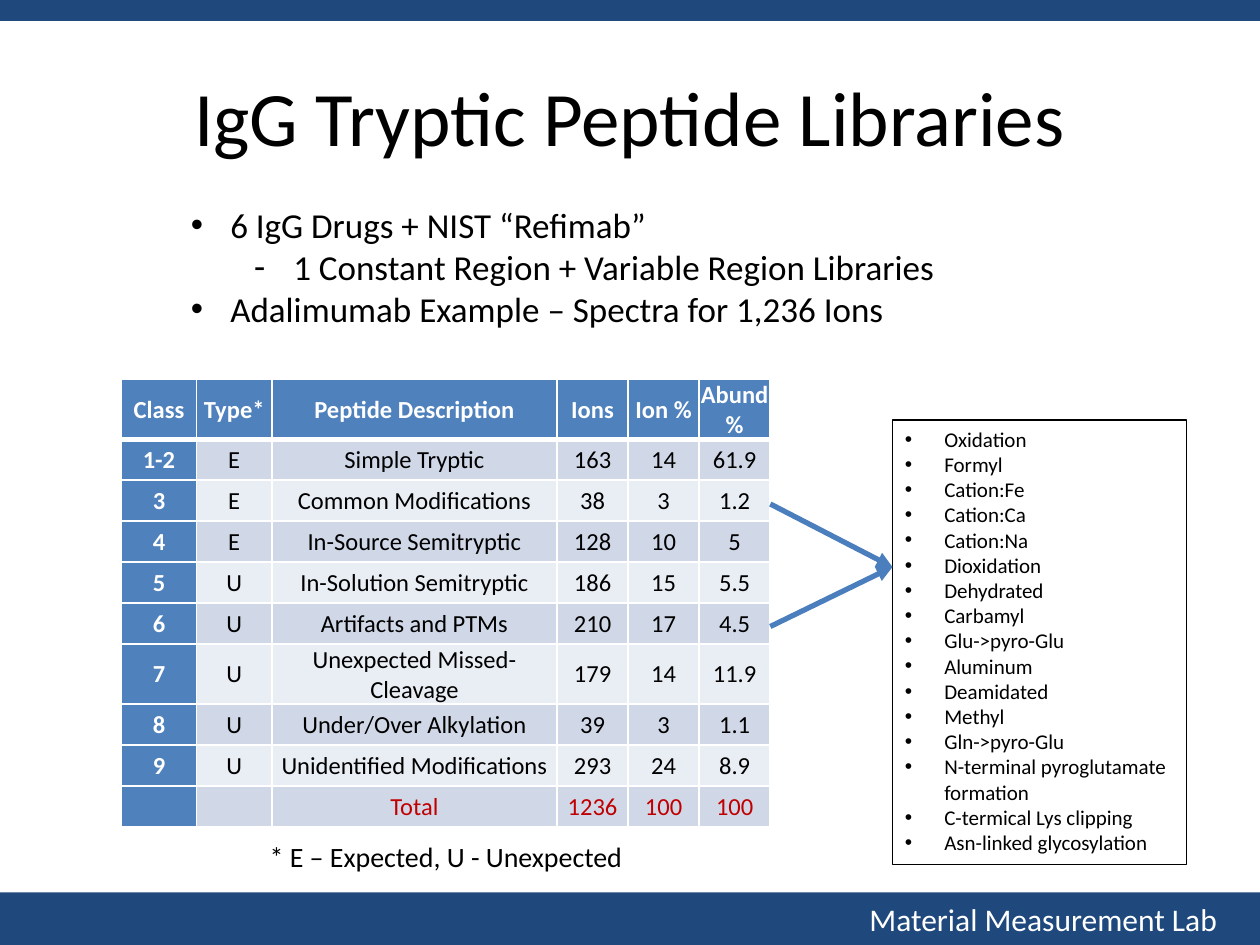
from collections import namedtuple
from dataclasses import dataclass

from lxml.etree import SubElement
from pptx import Presentation
from pptx.dml.color import RGBColor
from pptx.enum.shapes import MSO_CONNECTOR, MSO_SHAPE
from pptx.enum.text import MSO_ANCHOR, PP_ALIGN
from pptx.oxml.ns import qn
from pptx.util import Pt

Box = namedtuple("Box", "left top width height")


@dataclass(frozen=True)
class Theme:
    font: str = "Calibri"
    navy: str = "1F497D"
    blue: str = "4F81BD"
    arrow: str = "4B7EBC"
    band_dark: str = "D0D8E8"
    band_light: str = "E9EDF4"
    red: str = "C00000"
    black: str = "000000"
    white: str = "FFFFFF"
    title_size: float = 44
    point_size: float = 20
    footer_size: float = 18
    note_size: float = 16
    cell_size: float = 14
    list_size: float = 12


THEME = Theme()

POINTS = [
    (0, "6 IgG Drugs + NIST “Refimab”"),
    (1, "1 Constant Region + Variable Region Libraries"),
    (0, "Adalimumab Example – Spectra for 1,236 Ions"),
]
COLUMN_WIDTHS = [43, 43, 163, 40.6, 40.6, 40.6]
HEADER_HEIGHT, ROW_HEIGHT = 34.3, 23.4
TABLE_ROWS = [
    ("Class", "Type*", "Peptide Description", "Ions", "Ion %", "Abund %"),
    ("1-2", "E", "Simple Tryptic", "163", "14", "61.9"),
    ("3", "E", "Common Modifications", "38", "3", "1.2"),
    ("4", "E", "In-Source Semitryptic", "128", "10", "5"),
    ("5", "U", "In-Solution Semitryptic", "186", "15", "5.5"),
    ("6", "U", "Artifacts and PTMs", "210", "17", "4.5"),
    ("7", "U", "Unexpected Missed-Cleavage", "179", "14", "11.9"),
    ("8", "U", "Under/Over Alkylation", "39", "3", "1.1"),
    ("9", "U", "Unidentified Modifications", "293", "24", "8.9"),
    ("", "", "Total", "1236", "100", "100"),
]
MODIFICATIONS = [
    "Oxidation", "Formyl", "Cation:Fe", "Cation:Ca", "Cation:Na", "Dioxidation",
    "Dehydrated", "Carbamyl", "Glu->pyro-Glu", "Aluminum", "Deamidated", "Methyl",
    "Gln->pyro-Glu", "N-terminal pyroglutamate", "formation",
    "C-termical Lys clipping", "Asn-linked glycosylation",
]
CONTINUATION = "formation"


def color(value):
    return RGBColor.from_string(value)


def points(box):
    return [Pt(value) for value in box]


def set_values(target, values):
    for name, value in values.items():
        setattr(target, name, value)


def write(para, text, size, shade=THEME.black, bold=False):
    span = para.add_run()
    span.text = text
    set_values(span.font, {"name": THEME.font, "size": Pt(size), "bold": bold})
    span.font.color.rgb = color(shade)


def indent(para, margin, bullet=None, hang=22.5):
    """Set the left margin, with a hanging bullet where one is given."""
    properties = para._p.get_or_add_pPr()
    properties.set("marL", str(Pt(margin)))
    properties.set("indent", str(Pt(-hang) if bullet else 0))
    if bullet:
        SubElement(properties, qn("a:buFont")).set("typeface", "Arial")
        SubElement(properties, qn("a:buChar")).set("char", bullet)
    else:
        SubElement(properties, qn("a:buNone"))


def next_para(frame, index):
    return frame.add_paragraph() if index else frame.paragraphs[0]


def add_rectangle(page, box, fill, line=None):
    shape = page.shapes.add_shape(MSO_SHAPE.RECTANGLE, *points(box))
    shape.shadow.inherit = False
    shape.fill.solid()
    shape.fill.fore_color.rgb = color(fill)
    if line:
        shape.line.color.rgb = color(line)
        shape.line.width = Pt(1)
    else:
        shape.line.fill.background()
    return shape


def add_text_frame(page, box):
    frame = page.shapes.add_textbox(*points(box)).text_frame
    frame.word_wrap = True
    return frame


def add_bands(page, top_box, footer_box):
    add_rectangle(page, top_box, THEME.navy)
    frame = add_rectangle(page, footer_box, THEME.navy).text_frame
    set_values(frame, {"vertical_anchor": MSO_ANCHOR.MIDDLE, "margin_right": Pt(24.5)})
    para = frame.paragraphs[0]
    para.alignment = PP_ALIGN.RIGHT
    write(para, "Material Measurement Lab", THEME.footer_size, THEME.white)


def add_title(page, box):
    title = page.shapes.title
    set_values(title, dict(zip(Box._fields, points(box))))
    title.text_frame.vertical_anchor = MSO_ANCHOR.MIDDLE
    para = title.text_frame.paragraphs[0]
    para.alignment = PP_ALIGN.CENTER
    write(para, "IgG Tryptic Peptide Libraries", THEME.title_size)


def add_points(page, box):
    frame = add_text_frame(page, box)
    for index, (level, text) in enumerate(POINTS):
        para = next_para(frame, index)
        para.level = level
        indent(para, 22.5 + 36 * level, "•-"[level])
        write(para, text, THEME.point_size)


def set_borders(cell, widths):
    properties = cell._tc.get_or_add_tcPr()
    for side, width in widths.items():
        line = SubElement(properties, qn(f"a:ln{side}"), w=str(Pt(width)))
        fill = SubElement(line, qn("a:solidFill"))
        SubElement(fill, qn("a:srgbClr"), val=THEME.white)


def fill_cell(cell, text, row, column):
    strong = row == 0 or column == 0
    total = row == len(TABLE_ROWS) - 1
    band = THEME.band_dark if row % 2 else THEME.band_light
    shade = THEME.white if strong else THEME.red if total else THEME.black
    set_borders(cell, {"L": 1, "R": 1, "T": 3 if row == 1 else 1, "B": 1 if row else 3})
    cell.fill.solid()
    cell.fill.fore_color.rgb = color(THEME.blue if strong else band)
    set_values(cell, {
        "margin_left": Pt(0.7), "margin_right": Pt(0.7), "margin_top": Pt(0.7),
        "margin_bottom": 0, "vertical_anchor": MSO_ANCHOR.MIDDLE,
    })
    para = cell.text_frame.paragraphs[0]
    para.alignment = PP_ALIGN.CENTER
    if text:
        write(para, text, THEME.cell_size, shade, strong)
    else:
        para._p.get_or_add_endParaRPr().set("sz", str(THEME.cell_size * 100))


def add_class_table(page, box):
    table = page.shapes.add_table(len(TABLE_ROWS), len(COLUMN_WIDTHS), *points(box)).table
    set_values(table, {"first_row": False, "horz_banding": False})
    for column, width in zip(table.columns, COLUMN_WIDTHS):
        column.width = Pt(width)
    for row, texts in enumerate(TABLE_ROWS):
        table.rows[row].height = Pt(ROW_HEIGHT if row else HEADER_HEIGHT)
        for column, text in enumerate(texts):
            fill_cell(table.cell(row, column), text, row, column)


def add_modifications(page, box):
    frame = add_rectangle(page, box, THEME.white, THEME.black).text_frame
    set_values(frame, {"word_wrap": True, "vertical_anchor": MSO_ANCHOR.TOP})
    for index, text in enumerate(MODIFICATIONS):
        para = next_para(frame, index)
        para.alignment = PP_ALIGN.LEFT
        indent(para, 22.5, None if text == CONTINUATION else "•")
        write(para, text, THEME.list_size)


def add_note(page, box):
    para = add_text_frame(page, box).paragraphs[0]
    write(para, "* E – Expected, U - Unexpected", THEME.note_size)


def add_arrow(page, start, end):
    ends = points((*start, *end))
    arrow = page.shapes.add_connector(MSO_CONNECTOR.STRAIGHT, *ends)
    arrow.line.color.rgb = color(THEME.arrow)
    arrow.line.width = Pt(3)
    SubElement(arrow.line._get_or_add_ln(), qn("a:tailEnd"), type="triangle")
    SubElement(arrow._element.spPr, qn("a:effectLst"))


def main():
    deck = Presentation()
    deck.slide_width, deck.slide_height = Pt(720), Pt(540)
    page = deck.slides.add_slide(deck.slide_layouts[5])
    table_box = Box(69.4, 216.7, sum(COLUMN_WIDTHS), 256)
    list_box = Box(510, 240, 168, 254)
    add_bands(page, Box(0, 0, 720, 12), Box(0, 510, 720, 30))
    add_title(page, Box(54, 18, 612, 96))
    add_points(page, Box(102, 112.5, 492, 80))
    add_class_table(page, table_box)
    add_modifications(page, list_box)
    add_note(page, Box(147, 476, 219, 26.6))
    for row_middle in (288, 358):
        add_arrow(page, (table_box.left + table_box.width, row_middle), (list_box.left, 324))
    deck.save("out.pptx")


if __name__ == "__main__":
    main()
